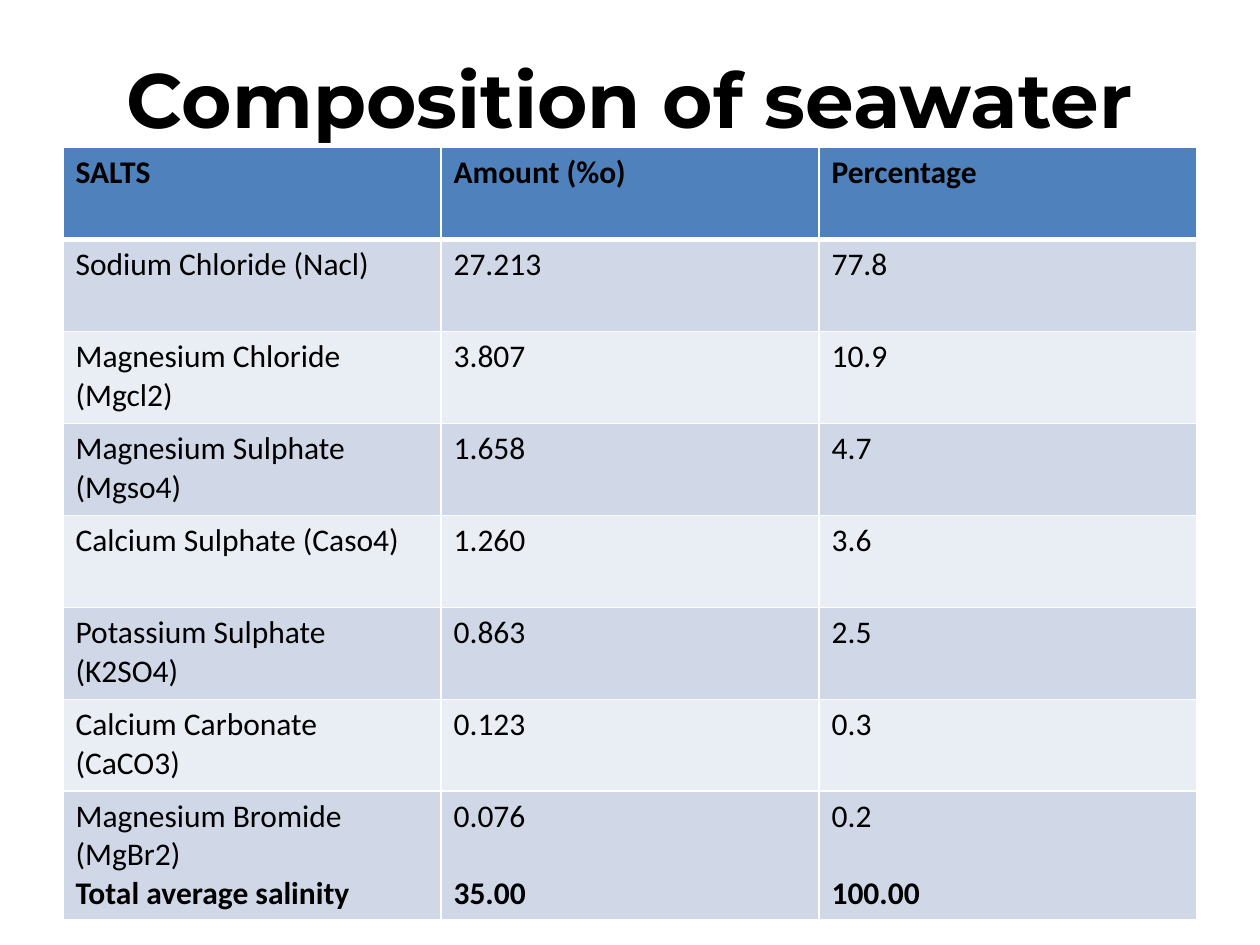
from dataclasses import dataclass

from lxml import etree
from pptx import Presentation
from pptx import util as u
from pptx.dml.color import RGBColor
from pptx.enum import text
from pptx.oxml.ns import qn


@dataclass(frozen=True)
class Theme:
    ink: str = "000000"
    header: str = "4F81BD"
    bands: tuple = ("D0D8E8", "E9EDF4")
    rule: str = "FFFFFF"
    title_font: str = "Montserrat"
    body_font: str = "Calibri"
    title_size: int = 44
    body_size: int = 18


theme = Theme()


def write(p, content, font=theme.body_font, size=theme.body_size,
          bold=False, align=text.PP_ALIGN.LEFT, before=0):
    p.alignment = align
    p.space_before = u.Pt(before)
    r = p.add_run()
    r.text = content
    r.font.name = font
    r.font.size = u.Pt(size)
    r.font.bold = bold
    r.font.color.rgb = RGBColor.from_string(theme.ink)


def add_borders(cell, **widths):
    tc_pr = cell._tc.get_or_add_tcPr()
    for side, width in widths.items():
        ln = etree.SubElement(tc_pr, qn(f"a:ln{side}"), w=str(u.Pt(width)))
        fill = etree.SubElement(ln, qn("a:solidFill"))
        etree.SubElement(fill, qn("a:srgbClr"), val=theme.rule)


prs = Presentation()
prs.slide_width, prs.slide_height = u.Inches(10), u.Inches(7.5)
s = prs.slides.add_slide(prs.slide_layouts[5])

# Title
title = s.shapes.title
title.left, title.top = u.Inches(0.5), u.Inches(0.3)
title.width, title.height = u.Inches(9), u.Inches(0.95)
tf = title.text_frame
tf.vertical_anchor = text.MSO_ANCHOR.MIDDLE
write(tf.paragraphs[0], "Composition of seawater", font=theme.title_font,
      size=theme.title_size, bold=True, align=text.PP_ALIGN.CENTER)

# Salts table
rows = [
    ("SALTS", "Amount (%o)", "Percentage"),
    ("Sodium Chloride (Nacl)", "27.213", "77.8"),
    ("Magnesium Chloride (Mgcl2)", "3.807", "10.9"),
    ("Magnesium Sulphate (Mgso4)", "1.658", "4.7"),
    ("Calcium Sulphate (Caso4)", "1.260", "3.6"),
    ("Potassium Sulphate (K2SO4)", "0.863", "2.5"),
    ("Calcium Carbonate (CaCO3)", "0.123", "0.3"),
    ("Magnesium Bromide (MgBr2)", "0.076", "0.2"),
]
totals = ("Total average salinity", "35.00", "100.00")
row_height = 0.73
last_row_height = 1.0

table = s.shapes.add_table(
    len(rows), len(totals), u.Inches(0.5), u.Inches(1.17),
    u.Inches(9), u.Inches(row_height * len(rows))).table
for column in table.columns:
    column.width = u.Inches(3)
for row in table.rows:
    row.height = u.Inches(row_height)
table.rows[len(rows) - 1].height = u.Inches(last_row_height)

for i, values in enumerate(rows):
    for j, value in enumerate(values):
        cell = table.cell(i, j)
        add_borders(cell, L=1, R=1, T=3 if i == 1 else 1, B=3 if i == 0 else 1)
        cell.fill.solid()
        color = theme.bands[(i - 1) % 2] if i else theme.header
        cell.fill.fore_color.rgb = RGBColor.from_string(color)
        write(cell.text_frame.paragraphs[0], value, bold=i == 0)

# Totals share the last row, level with the wrapped salt name
for j, total in enumerate(totals):
    p = table.cell(len(rows) - 1, j).text_frame.add_paragraph()
    write(p, total, bold=True, before=22 if j else 0)

prs.save("out.pptx")
